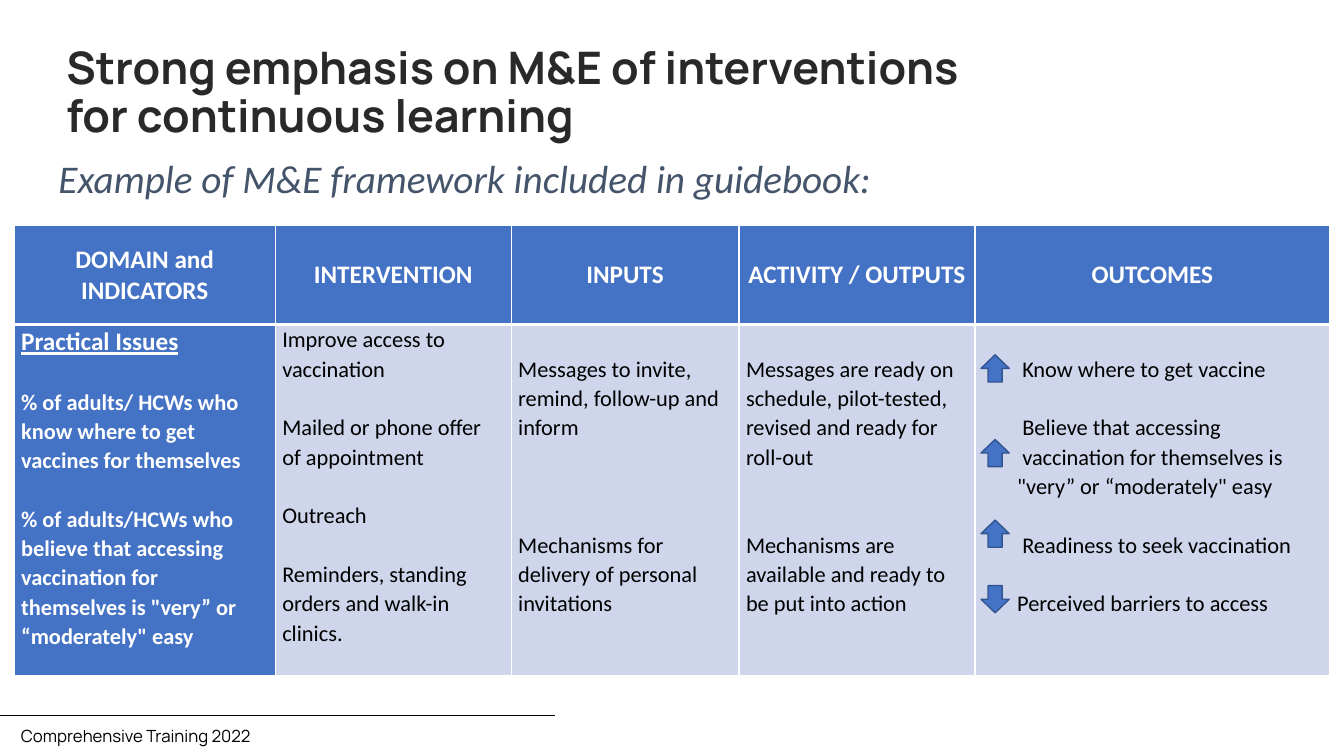
import lxml.etree
import pptx
import pptx.dml.color
import pptx.enum.shapes
import pptx.enum.text
import pptx.oxml.ns
import pptx.util

PX = 9144
BLUE, PALE, WHITE, BLACK = "4472C4", "CFD5EA", "FFFFFF", "000000"
ANCHOR = pptx.enum.text.MSO_ANCHOR
SHAPE = pptx.enum.shapes.MSO_SHAPE


def rgb(value):
    return pptx.dml.color.RGBColor.from_string(value)


def style(paragraph, name, size, color, bold=False, italic=False):
    font = paragraph.font
    font.name, font.size = name, pptx.util.Pt(size)
    font.bold, font.italic = bold, italic
    font.color.rgb = rgb(color)


presentation = pptx.Presentation()
presentation.slide_width = 1333 * PX
presentation.slide_height = 750 * PX
slide = presentation.slides.add_slide(presentation.slide_layouts[6])

footer_line = slide.shapes.add_connector(
    pptx.enum.shapes.MSO_CONNECTOR.STRAIGHT, 0, 710 * PX, 550 * PX, 710 * PX)
footer_line.line.color.rgb = rgb(BLACK)
footer_line.line.width = pptx.util.Pt(0.5)
lxml.etree.SubElement(footer_line._element.spPr, pptx.oxml.ns.qn("a:effectLst"))

texts = [
    ("Comprehensive Training 2022", (11, 715, 439, 30), (10, 5, 10, 5),
     ANCHOR.TOP, 1, ("Manrope", 12, BLACK)),
    ("Strong emphasis on M&E of interventions\vfor continuous learning",
     (56, 40, 1260, 85), (10, 5, 10, 5), ANCHOR.TOP, 0.9,
     ("Manrope", 32, "292929", True)),
    ("Example of M&E framework included in guidebook:", (56, 153, 1232, 47),
     (2, 0, 39, 0), ANCHOR.BOTTOM, 0.9, ("Calibri", 28, "44546A", False, True)),
]
for text, box, margins, anchor, spacing, font in texts:
    frame = slide.shapes.add_textbox(*[value * PX for value in box]).text_frame
    frame.word_wrap = True
    frame.vertical_anchor = anchor
    (frame.margin_left, frame.margin_top, frame.margin_right,
     frame.margin_bottom) = [value * PX for value in margins]
    paragraph = frame.paragraphs[0]
    paragraph.text = text
    paragraph.line_spacing = spacing
    style(paragraph, *font)

headers = ["DOMAIN and INDICATORS", "INTERVENTION", "INPUTS",
           "ACTIVITY / OUTPUTS", "OUTCOMES"]
column_widths = [259, 234, 226, 234, 352]
row_heights = [98, 348]
line_height = 21
# Each entry: text, blank lines above it, left indent
body = [
    [("Practical Issues", 0, 0),
     ("% of adults/ HCWs who know where to get vaccines for themselves", 1, 0),
     ("% of adults/HCWs who believe that accessing vaccination for themselves "
      "is \"very” or “moderately\" easy", 1, 0)],
    [("Improve access to vaccination", 0, 0),
     ("Mailed or phone offer of appointment", 1, 0),
     ("Outreach", 1, 0),
     ("Reminders, standing orders and walk-in clinics.", 1, 0)],
    [("Messages to invite, remind, follow-up and inform", 1, 0),
     ("Mechanisms for delivery of personal invitations", 3, 0)],
    [("Messages are ready on schedule, pilot-tested, revised and ready for "
      "roll-out", 1, 0),
     ("Mechanisms are available and ready to be put into action", 2, 0)],
    [("Know where to get vaccine", 1, 40),
     ("Believe that accessing", 1, 40),
     ("vaccination for themselves is", 0, 40),
     ("\"very” or “moderately\" easy", 0, 35),
     ("Readiness to seek vaccination", 1, 40),
     ("Perceived barriers to access", 1, 35)],
]
table = slide.shapes.add_table(
    2, 5, 14 * PX, 224 * PX, sum(column_widths) * PX, sum(row_heights) * PX).table
table.first_row = table.horz_banding = False
for row, height in zip(table.rows, row_heights):
    row.height = height * PX
for index, width in enumerate(column_widths):
    table.columns[index].width = width * PX
    header_cell, body_cell = table.cell(0, index), table.cell(1, index)

    header_cell.text = headers[index]
    header_cell.vertical_anchor = ANCHOR.MIDDLE
    paragraph = header_cell.text_frame.paragraphs[0]
    paragraph.alignment = pptx.enum.text.PP_ALIGN.CENTER
    style(paragraph, "Calibri", 18, WHITE, True)

    first_column = index == 0
    body_cell.text = "\n".join(text for text, blanks, indent in body[index])
    for position, (text, blanks, indent) in enumerate(body[index]):
        paragraph = body_cell.text_frame.paragraphs[position]
        paragraph.line_spacing = 1.07
        if position:
            paragraph.space_before = pptx.util.Pt(blanks * line_height)
        paragraph._p.get_or_add_pPr().set("marL", str(indent * PX))
        heading = first_column and position == 0
        style(paragraph, "Calibri", 18 if heading else 16,
              WHITE if first_column else BLACK, first_column)
        paragraph.font.underline = heading

    for cell, fill, top_blanks, borders in [
            (header_cell, BLUE, 0, (1, 1, 1, 3)),
            (body_cell, BLUE if first_column else PALE, body[index][0][1],
             (1, 1, 3, 1))]:
        cell.margin_left = cell.margin_right = 7 * PX
        cell.margin_top = pptx.util.Pt(top_blanks * line_height)
        cell.margin_bottom = 0
        properties = cell._tc.get_or_add_tcPr()
        for side, points in zip("LRTB", borders):
            border = lxml.etree.SubElement(
                properties, pptx.oxml.ns.qn(f"a:ln{side}"),
                w=str(pptx.util.Pt(points)))
            solid = lxml.etree.SubElement(border, pptx.oxml.ns.qn("a:solidFill"))
            lxml.etree.SubElement(solid, pptx.oxml.ns.qn("a:srgbClr"), val=WHITE)
        cell.fill.solid()
        cell.fill.fore_color.rgb = rgb(fill)

for top, direction in [(352, SHAPE.UP_ARROW), (436, SHAPE.UP_ARROW),
                       (516, SHAPE.UP_ARROW), (581, SHAPE.DOWN_ARROW)]:
    arrow = slide.shapes.add_shape(direction, 973 * PX, top * PX, 28 * PX, 27 * PX)
    arrow.shadow.inherit = False
    arrow.fill.solid()
    arrow.fill.fore_color.rgb = rgb(BLUE)
    arrow.line.color.rgb = rgb("325491")
    arrow.line.width = pptx.util.Pt(1)

presentation.save("out.pptx")
